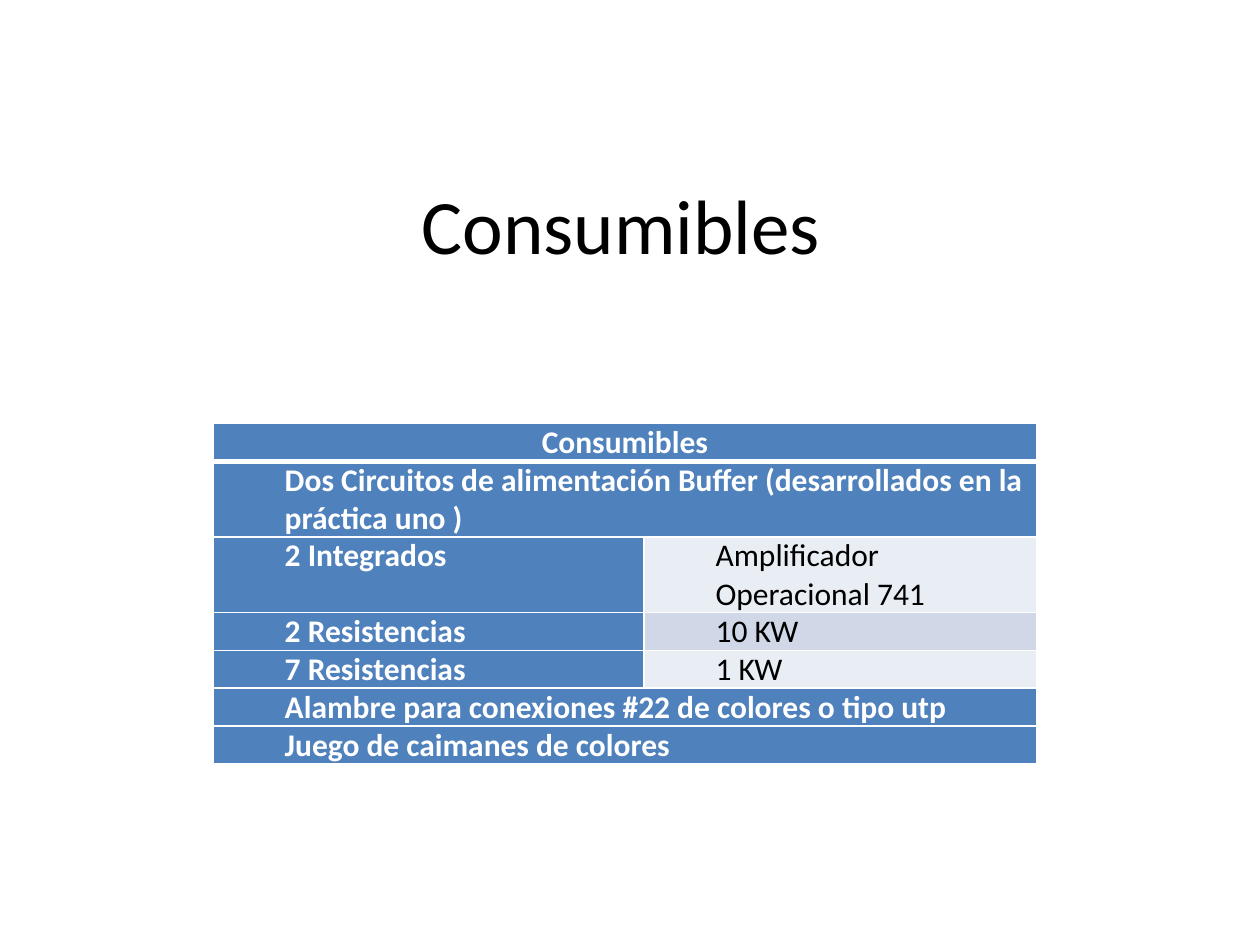
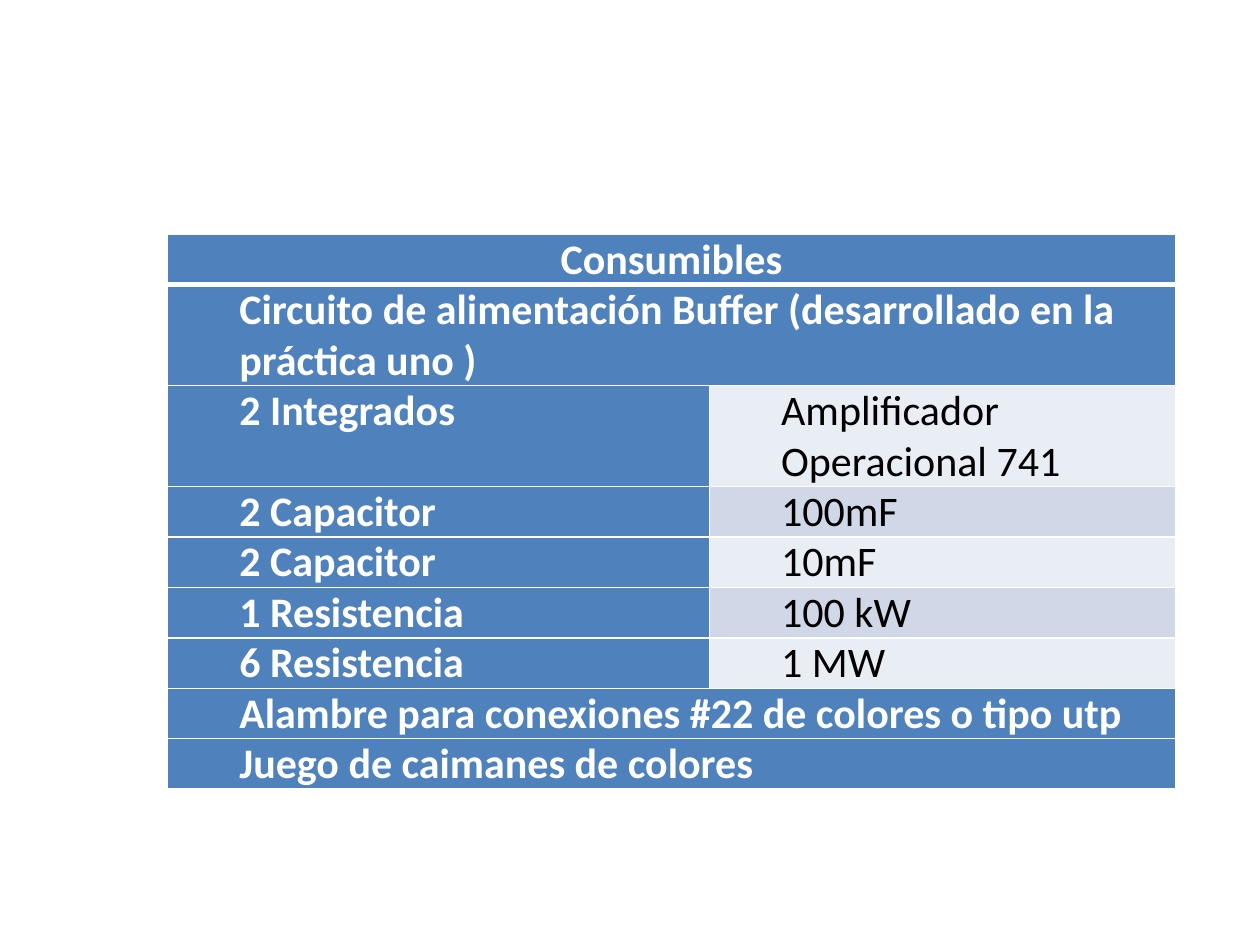
from dataclasses import dataclass

from lxml import etree
from pptx import Presentation
from pptx.dml.color import RGBColor
from pptx.enum.text import MSO_ANCHOR, PP_ALIGN
from pptx.oxml.ns import qn
from pptx.slide import Slide
from pptx.table import _Cell
from pptx.text.text import TextFrame
from pptx.util import Inches, Pt

LEFT, CENTER = PP_ALIGN.LEFT, PP_ALIGN.CENTER
TOP, MIDDLE = MSO_ANCHOR.TOP, MSO_ANCHOR.MIDDLE


@dataclass(frozen=True)
class Theme:
    font: str = "Calibri"
    blue: str = "4F81BD"
    bands: tuple[str, str] = ("E9EDF4", "D0D8E8")
    white: str = "FFFFFF"
    black: str = "000000"
    title: int = 44
    thin: int = 1
    thick: int = 3
    indent: float = 0.5
    pad: float = 0.07


@dataclass(frozen=True)
class Row:
    """One table row; without a value, the label spans both columns."""
    label: str
    value: str = ""
    lines: int = 1


@dataclass(frozen=True)
class Parts:
    left: float
    top: float
    cols: tuple[float, float]
    line: float
    size: int
    rows: tuple[Row, ...]


THEME = Theme()
HEAD = Row("Consumibles")
AMP = Row("2 Integrados", "Amplificador Operacional 741", lines=2)
TAIL = (
    Row("Alambre para conexiones #22 de colores o tipo utp"),
    Row("Juego de caimanes de colores"),
)

BUFFER = Parts(1.69, 3.36, (3.42, 3.12), 0.3, 18, (
    HEAD,
    Row("Dos Circuitos de alimentación Buffer (desarrollados en la práctica uno )",
        lines=2),
    AMP,
    Row("2 Resistencias", "10 KW"),
    Row("7 Resistencias", "1 KW"),
    *TAIL,
))
FILTER = Parts(1.33, 1.86, (4.3, 3.7), 0.4, 24, (
    HEAD,
    Row("Circuito de alimentación Buffer (desarrollado en la práctica uno )",
        lines=2),
    AMP,
    Row("2 Capacitor", "100mF"),
    Row("2 Capacitor", "10mF"),
    Row("1 Resistencia", "100 kW"),
    Row("6 Resistencia", "1 MW"),
    *TAIL,
))


def write(frame: TextFrame, text: str, *, size: int, color: str,
          bold: bool = False, align: PP_ALIGN = LEFT, indent: float = 0) -> None:
    frame.word_wrap = True
    para = frame.paragraphs[0]
    para.alignment = align
    if indent:
        props = para._p.get_or_add_pPr()
        props.set("marL", str(Inches(indent)))
        props.set("indent", "0")
    run = para.add_run()
    run.text = text
    font = run.font
    font.name, font.size, font.bold = THEME.font, Pt(size), bold
    font.color.rgb = RGBColor.from_string(color)


def border(cell: _Cell, top: int, bottom: int) -> None:
    props = cell._tc.get_or_add_tcPr()
    sides = {"L": THEME.thin, "R": THEME.thin, "T": top, "B": bottom}
    for side, width in sides.items():
        line = etree.SubElement(props, qn(f"a:ln{side}"), w=str(Pt(width)))
        fill = etree.SubElement(line, qn("a:solidFill"))
        etree.SubElement(fill, qn("a:srgbClr"), val=THEME.white)


def style(cell: _Cell, fill: str, top: int, bottom: int) -> None:
    cell.margin_left = cell.margin_right = Inches(THEME.pad)
    cell.margin_top = cell.margin_bottom = 0
    cell.vertical_anchor = TOP
    border(cell, top, bottom)
    cell.fill.solid()
    cell.fill.fore_color.rgb = RGBColor.from_string(fill)


def add_title(slide: Slide, text: str) -> None:
    box = slide.shapes.add_textbox(Inches(0.43), Inches(1.15),
                                   Inches(9), Inches(1.25))
    box.text_frame.vertical_anchor = MIDDLE
    write(box.text_frame, text, size=THEME.title, color=THEME.black, align=CENTER)


def add_parts(slide: Slide, parts: Parts) -> None:
    height = parts.line * sum(row.lines for row in parts.rows)
    table = slide.shapes.add_table(
        len(parts.rows), len(parts.cols), Inches(parts.left), Inches(parts.top),
        Inches(sum(parts.cols)), Inches(height)).table
    table.first_row = table.horz_banding = False
    for col, width in zip(table.columns, parts.cols):
        col.width = Inches(width)

    for i, row in enumerate(parts.rows):
        table.rows[i].height = Inches(parts.line * row.lines)
        label, value = table.cell(i, 0), table.cell(i, 1)
        top = THEME.thick if i == 1 else THEME.thin
        bottom = THEME.thick if i == 0 else THEME.thin
        band = THEME.bands[i % 2] if row.value else THEME.blue
        style(label, THEME.blue, top, bottom)
        style(value, band, top, bottom)
        head = i == 0
        write(label.text_frame, row.label, size=parts.size, color=THEME.white,
              bold=True, align=CENTER if head else LEFT,
              indent=0 if head else THEME.indent)
        if row.value:
            write(value.text_frame, row.value, size=parts.size,
                  color=THEME.black, indent=THEME.indent)
        else:
            label.merge(value)


def main() -> None:
    deck = Presentation()
    deck.slide_width, deck.slide_height = Inches(10), Inches(7.5)
    blank = deck.slide_layouts[6]

    first = deck.slides.add_slide(blank)
    add_title(first, "Consumibles")
    add_parts(first, BUFFER)

    second = deck.slides.add_slide(blank)
    add_parts(second, FILTER)

    deck.save("out.pptx")


if __name__ == "__main__":
    main()
